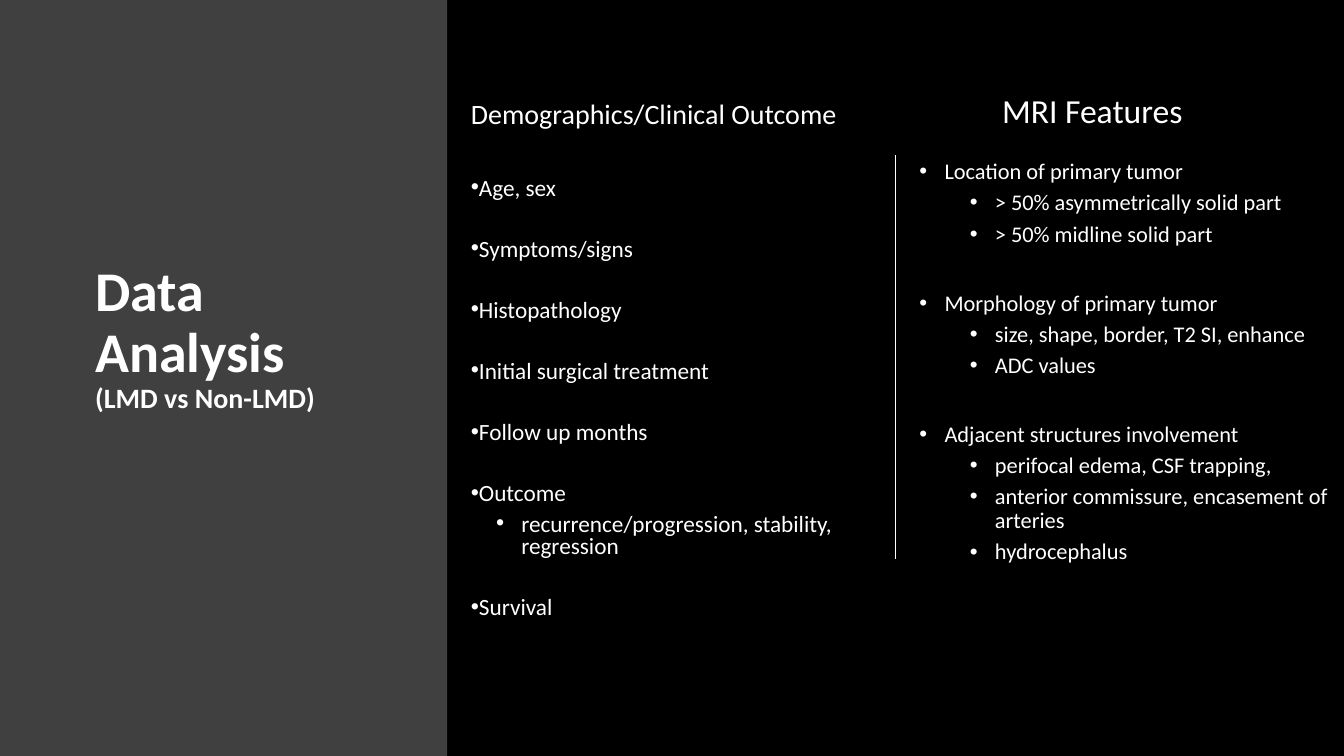
from lxml import etree
from pptx import Presentation, util as u
from pptx.dml.color import RGBColor
from pptx.enum import shapes, text
from pptx.oxml import ns

PX = 9525  # EMU per px, so the slide is 1280 x 720 px
FONT = "Calibri"
HUE = {"back": "000000", "panel": "404040", "ink": "FFFFFF"}

# Each topic: its heading, then its sub-points
CLINIC = [
    ("Age, sex", []),
    ("Symptoms/signs", []),
    ("Histopathology", []),
    ("Initial surgical treatment", []),
    ("Follow up months", []),
    ("Outcome", ["recurrence/progression, stability, regression"]),
    ("Survival", []),
]
SCANS = [
    ("Location of primary tumor",
     ["> 50% asymmetrically solid part", "> 50% midline solid part"]),
    ("Morphology of primary tumor",
     ["size, shape, border, T2 SI, enhance", "ADC values"]),
    ("Adjacent structures involvement",
     ["perifocal edema, CSF trapping,",
      "anterior commissure, encasement of arteries", "hydrocephalus"]),
]


def px(n):
    return u.Emu(n * PX)


def color(name):
    return RGBColor.from_string(HUE[name])


def place(shape, box):
    shape.left, shape.top, shape.width, shape.height = map(px, box)
    frame = shape.text_frame
    frame.word_wrap = True
    frame.auto_size = text.MSO_AUTO_SIZE.NONE
    frame.vertical_anchor = text.MSO_ANCHOR.TOP
    return frame


def write(par, words, size=16, bold=False, line=1.0, gap=0, level=0, margin=None):
    """Add words to a paragraph; a margin in px makes it a bullet."""
    par.alignment = text.PP_ALIGN.LEFT
    par.level = level
    par.line_spacing = line
    par.space_before = u.Pt(gap)
    if margin is not None:
        props = par._p.get_or_add_pPr()
        props.set("marL", str(px(margin)))
        props.set("indent", str(px(-24)))
        etree.SubElement(props, ns.qn("a:buFont")).set("typeface", "Arial")
        etree.SubElement(props, ns.qn("a:buChar")).set("char", "•")
    run = par.add_run()
    run.text = words
    font = run.font
    font.name, font.size, font.bold = FONT, u.Pt(size), bold
    font.color.rgb = color("ink")


def topics(frame, items, margin, apart, near, **look):
    """Fill a frame with topics, apart from each other, sub-points near."""
    for i, (head, subs) in enumerate(items):
        par = frame.add_paragraph() if i else frame.paragraphs[0]
        write(par, head, gap=apart if i else 0, margin=margin, **look)
        for sub in subs:
            write(frame.add_paragraph(), sub, gap=near, level=1,
                  margin=margin + 48, **look)


def label(slide, box, words, size):
    frame = place(slide.shapes.add_textbox(0, 0, 0, 0), box)
    write(frame.paragraphs[0], words, size=size)


def side(slide, box):
    """Grey panel with the slide title."""
    x, y, w, h = box
    panel = slide.shapes.add_shape(shapes.MSO_SHAPE.RECTANGLE, *map(px, box))
    panel.shadow.inherit = False
    panel.fill.solid()
    panel.fill.fore_color.rgb = color("panel")
    panel.line.fill.background()
    title = slide.shapes.title
    title.element.addprevious(panel.element)  # behind the title
    par = place(title, (x + 81, y + 246, 304, 458)).paragraphs[0]
    write(par, "Data Analysis", size=40, bold=True, line=0.9)
    par.add_line_break()
    write(par, "(LMD vs Non-LMD)", size=20, bold=True, line=0.9)


def clinic(slide, box):
    """Middle column: heading and spaced list."""
    x, y, w, h = box
    label(slide, (x, y, 371, 42), "Demographics/Clinical Outcome", 20)
    frame = place(slide.shapes.add_textbox(0, 0, 0, 0), (x, y + 78, w, h - 78))
    topics(frame, CLINIC, margin=0, apart=27.75, near=6, size=16.6, line=0.8)


def scans(slide, box):
    """Right column: heading, nested list and the rule at its left."""
    x, y, w, h = box
    label(slide, (x + 79, y, 347, 48), "MRI Features", 24)
    frame = place(slide.placeholders[1], (x, y + 67, w, h - 67))
    topics(frame, SCANS, margin=24, apart=32, near=5, line=0.9)
    rule = slide.shapes.add_connector(
        shapes.MSO_CONNECTOR.STRAIGHT,
        px(x - 13), px(y + 67), px(x - 13), px(y + 451))
    rule.line.color.rgb = color("ink")
    rule.line.width = u.Pt(1)
    etree.SubElement(rule.element.spPr, ns.qn("a:effectLst"))


def main():
    deck = Presentation()
    deck.slide_width, deck.slide_height = px(1280), px(720)
    slide = deck.slides.add_slide(deck.slide_layouts[1])
    fill = slide.background.fill
    fill.solid()
    fill.fore_color.rgb = color("back")
    side(slide, (0, 0, 426, 720))
    clinic(slide, (439, 87, 403, 536))
    scans(slide, (866, 81, 475, 525))
    deck.save("out.pptx")


if __name__ == "__main__":
    main()
